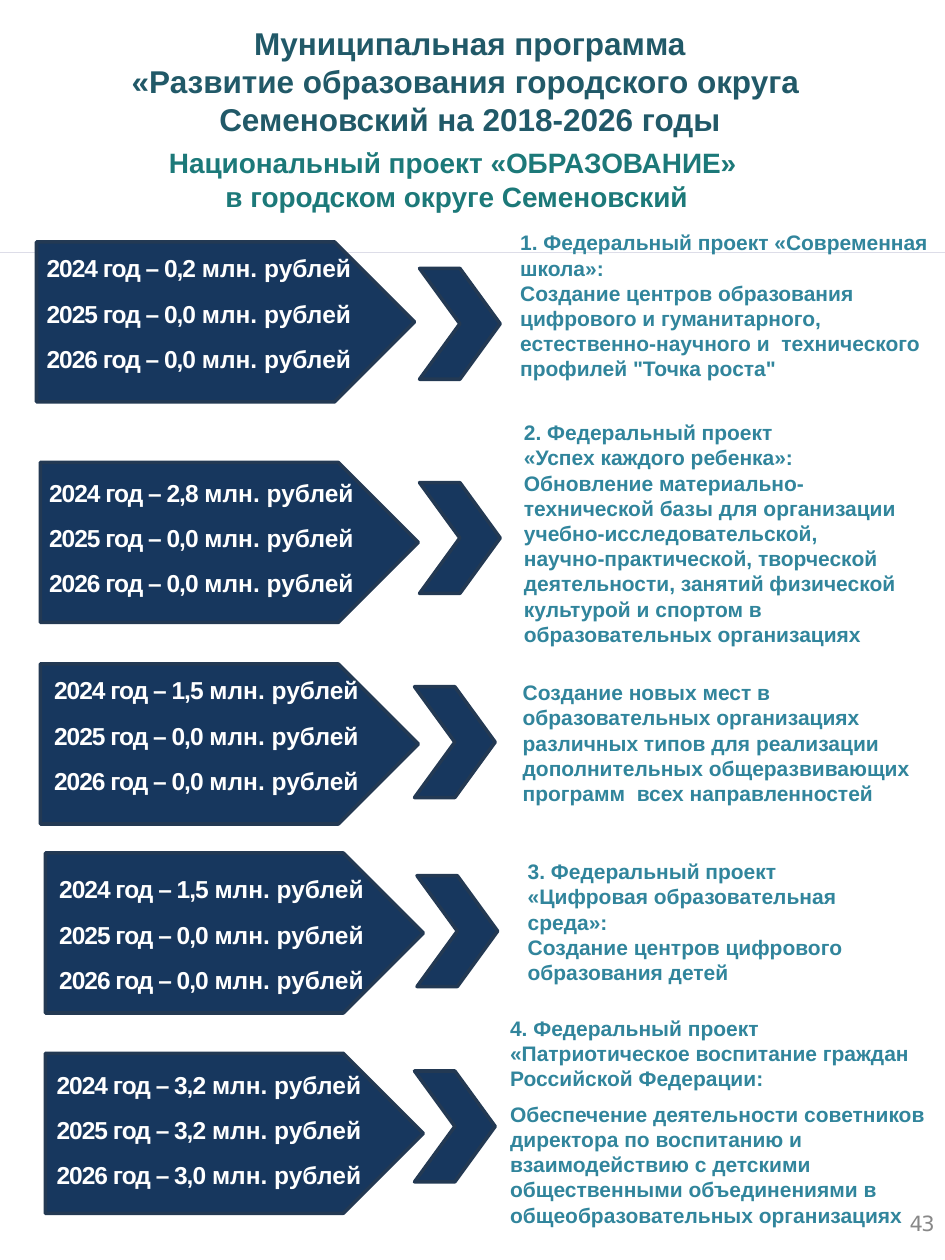
from dataclasses import dataclass

from lxml import etree
from pptx import Presentation, util as u
from pptx.dml.color import RGBColor
from pptx.enum import shapes, text
from pptx.oxml.ns import qn

COLS, ROWS = 75, 100
NAVY, EDGE, TEAL = "17375E", "233953", "31859C"
YEARS = 2024, 2025, 2026

prs = Presentation()
prs.slide_width, prs.slide_height = u.Inches(7.5), u.Inches(10)
slide = prs.slides.add_slide(prs.slide_layouts[5])


@dataclass
class Box:
    """Columns and rows of the slide grid."""
    col: float
    row: float
    wide: float
    high: float

    def emu(self) -> tuple[int, ...]:
        dx, dy = prs.slide_width / COLS, prs.slide_height / ROWS
        return (round(self.col * dx), round(self.row * dy),
                round(self.wide * dx), round(self.high * dy))


@dataclass
class Stage:
    arrow: tuple[float, float]
    chevron: tuple[float, float]
    sums: tuple[float, float]
    costs: tuple[str, str, str]
    note: Box
    lines: list[str]
    gap: float = 0


STAGES = [
    Stage((2.9, 19.2), (33.3, 21.3), (3.7, 20.1), ("0,2", "0,0", "0,0"),
          Box(40.3, 17.7, 34.5, 13.1),
          ["1. Федеральный проект «Современная школа»:",
           "Создание центров образования цифрового и гуманитарного, "
           "естественно-научного и  технического профилей \"Точка роста\""]),
    Stage((3.2, 36.7), (33.3, 38.3), (3.9, 37.9), ("2,8", "0,0", "0,0"),
          Box(40.6, 32.7, 32.1, 19.2),
          ["2. Федеральный проект",
           "«Успех каждого ребенка»:",
           "Обновление материально-технической базы для организации "
           "учебно-исследовательской, научно-практической, творческой "
           "деятельности, занятий физической культурой и спортом в "
           "образовательных организациях"]),
    Stage((3.2, 52.7), (32.9, 54.5), (4.3, 53.6), ("1,5", "0,0", "0,0"),
          Box(40.5, 53.4, 33.1, 11.1),
          ["Создание новых мест в образовательных организациях различных "
           "типов для реализации дополнительных общеразвивающих программ  "
           "всех направленностей"]),
    Stage((3.6, 67.7), (33.1, 69.5), (4.7, 69.4), ("1,5", "0,0", "0,0"),
          Box(40.9, 67.6, 30.3, 11.1),
          ["3. Федеральный проект «Цифровая образовательная среда»:",
           "Создание центров цифрового образования детей"]),
    Stage((3.6, 83.6), (32.9, 85), (4.5, 84.9), ("3,2", "3,2", "3,0"),
          Box(39.5, 80, 35.1, 18),
          ["4. Федеральный проект «Патриотическое воспитание граждан "
           "Российской Федерации:",
           "Обеспечение деятельности советников директора по воспитанию и "
           "взаимодействию с детскими общественными объединениями в "
           "общеобразовательных организациях"], gap=6),
]


def rgb(code: str) -> RGBColor:
    return RGBColor.from_string(code)


def style(par, size: float, code: str, bold: bool = True,
          face: str = "Arial") -> None:
    font = par.font
    font.name, font.size, font.bold = face, u.Pt(size), bold
    font.color.rgb = rgb(code)


def write(shape, lines: list[str], size: float, code: str, gap: float = 0,
          align=text.PP_ALIGN.LEFT, anchor=text.MSO_ANCHOR.TOP) -> None:
    frame = shape.text_frame
    frame.word_wrap, frame.vertical_anchor = True, anchor
    frame.auto_size = text.MSO_AUTO_SIZE.NONE
    frame.text = "\n".join(lines)
    for n, par in enumerate(frame.paragraphs):
        par.alignment = align
        par.space_before = u.Pt(gap if n else 0)
        style(par, size, code)


def label(box: Box):
    return slide.shapes.add_textbox(*box.emu())


def bare(frame) -> None:
    """Remove the inner margins."""
    frame.margin_left = frame.margin_right = 0
    frame.margin_top = frame.margin_bottom = 0


def block(kind, box: Box) -> None:
    shape = slide.shapes.add_shape(kind, *box.emu())
    shape.shadow.inherit = False
    shape.fill.solid()
    shape.fill.fore_color.rgb = rgb(NAVY)
    shape.line.color.rgb = rgb(EDGE)
    shape.line.width = u.Pt(2)


def track(run, points: float) -> None:
    run._r.get_or_add_rPr().set("spc", str(round(points * 100)))


def budget(stage: Stage) -> None:
    frame = label(Box(*stage.sums, 33, 12.5)).text_frame
    frame.word_wrap = True
    bare(frame)
    for n, (year, cost) in enumerate(zip(YEARS, stage.costs)):
        par = frame.add_paragraph() if n else frame.paragraphs[0]
        par.space_before = u.Pt(9.1 if n else 0)
        style(par, 14, "FFFFFF")
        run = par.add_run()
        run.text = f"{year} год – {cost} "
        track(run, -0.6)
        par.add_run().text = "млн. рублей"


def draw(stage: Stage) -> None:
    block(shapes.MSO_SHAPE.PENTAGON, Box(*stage.arrow, 30, 12.7))
    block(shapes.MSO_SHAPE.CHEVRON, Box(*stage.chevron, 6.4, 8.8))
    budget(stage)
    write(label(stage.note), stage.lines, 12, TEAL, stage.gap,
          anchor=text.MSO_ANCHOR.MIDDLE)


def rule(row: float) -> None:
    left, top, wide, _ = Box(0, row, COLS, 0).emu()
    line = slide.shapes.add_connector(
        shapes.MSO_CONNECTOR.STRAIGHT, left, top, left + wide, top)
    line.line.color.rgb = rgb("DDDDE8")
    line.line.width = u.Pt(0.5)
    etree.SubElement(line._element.spPr, qn("a:effectLst"))


def number(value: str) -> None:
    frame = label(Box(72.2, 96.1, 2.5, 2.5)).text_frame
    bare(frame)
    par = frame.paragraphs[0]
    style(par, 12, "888888", False, "DejaVu Sans")
    run = par.add_run()
    run.text = value
    track(run, -1)


def main() -> None:
    title = slide.shapes.title
    title.left, title.top, title.width, title.height = Box(
        -0.2, 1.4, COLS, 10.1).emu()
    write(title, ["Муниципальная программа\v"
                  "«Развитие образования городского округа ",
                  "Семеновский на 2018-2026 годы"],
          18, "215968", align=text.PP_ALIGN.CENTER)
    write(label(Box(11.2, 11.1, 50.1, 9.4)),
          ["Национальный проект «ОБРАЗОВАНИЕ» ",
           "в городском округе Семеновский"],
          16, "1C7979", align=text.PP_ALIGN.CENTER)
    rule(20)
    for stage in STAGES:
        draw(stage)
    number("43")
    prs.save("out.pptx")


if __name__ == "__main__":
    main()
